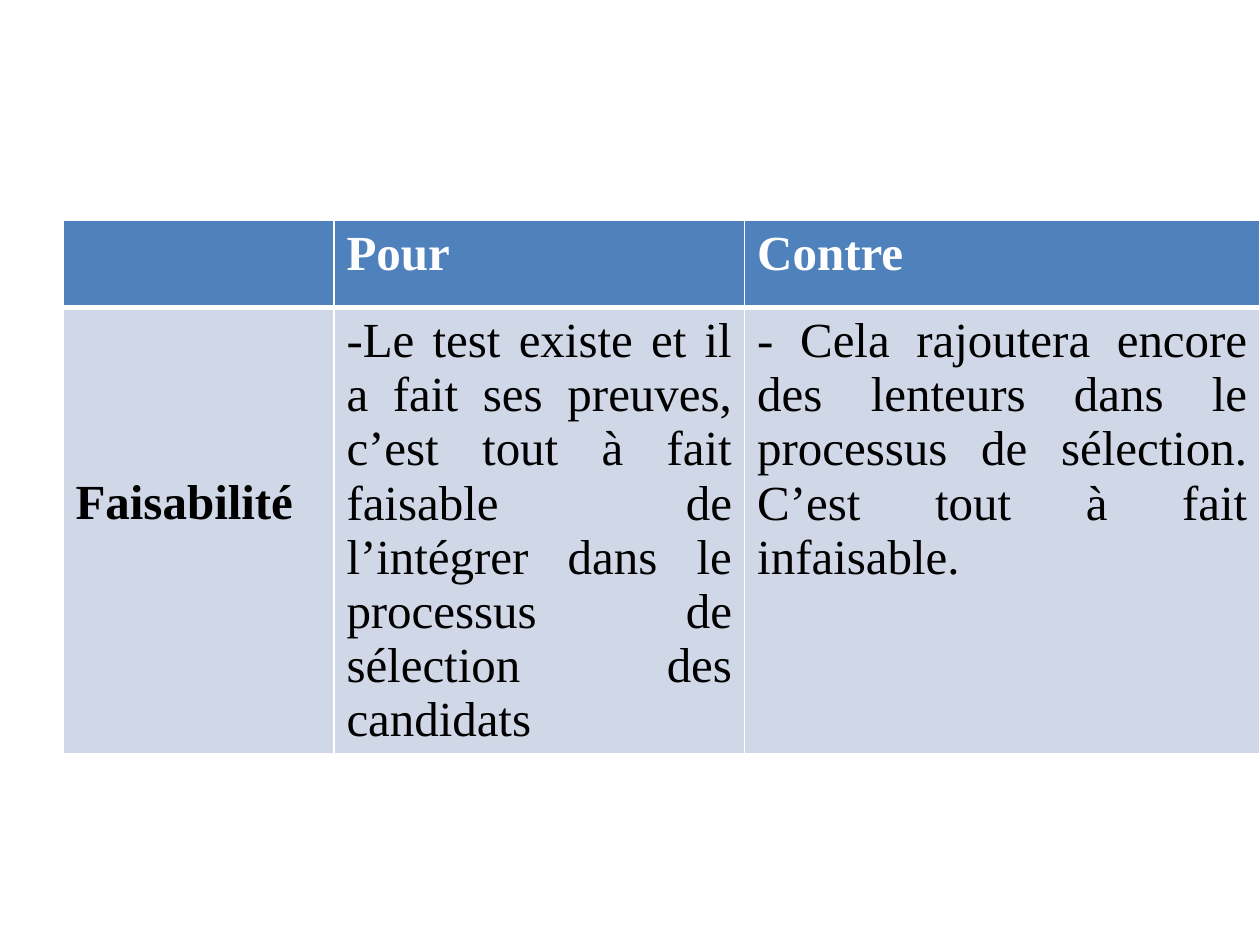
from lxml.etree import SubElement
from pptx import Presentation
from pptx.dml.color import RGBColor
from pptx.enum.text import PP_ALIGN
from pptx.oxml.ns import qn
from pptx.util import Inches, Pt

HEADER_FILL, BODY_FILL = "4F81BD", "D0D8E8"
WHITE, BLACK = "FFFFFF", "000000"
COLUMN_WIDTHS = (2.15, 3.26, 4.09)
ROW_HEIGHTS = (0.69, 3.53)
ARGUMENTS = (
    ("", "Pour", "Contre"),
    (
        "Faisabilité",
        "-Le test existe et il a fait ses preuves, c’est tout à fait faisable "
        "de l’intégrer dans le processus de sélection des candidats",
        "- Cela rajoutera encore des lenteurs dans le processus de sélection. "
        "C’est tout à fait infaisable.",
    ),
)


def color(value):
    return RGBColor.from_string(value)


def write(frame, text, size=28, font="Times New Roman", fill=BLACK, bold=False):
    paragraph = frame.paragraphs[0]
    paragraph.alignment = PP_ALIGN.JUSTIFY
    if not text:
        return
    run = paragraph.add_run()
    run.text = text
    run.font.size = Pt(size)
    run.font.name = font
    run.font.bold = bold
    run.font.color.rgb = color(fill)


def set_borders(cell, **widths):
    """Draw white borders; must run before the cell's fill is set."""
    properties = cell._tc.get_or_add_tcPr()
    for side in "LRTB":
        line = SubElement(properties, qn(f"a:ln{side}"), w=str(Pt(widths.get(side, 1))))
        solid = SubElement(line, qn("a:solidFill"))
        SubElement(solid, qn("a:srgbClr"), val=WHITE)


def add_arguments_table(slide, left, top, width, height):
    table = slide.shapes.add_table(
        len(ARGUMENTS), len(COLUMN_WIDTHS),
        Inches(left), Inches(top), Inches(width), Inches(height),
    ).table
    for column, column_width in zip(table.columns, COLUMN_WIDTHS):
        column.width = Inches(column_width)
    for row, row_height in zip(table.rows, ROW_HEIGHTS):
        row.height = Inches(row_height)

    for r, texts in enumerate(ARGUMENTS):
        header = r == 0
        for c, text in enumerate(texts):
            cell = table.cell(r, c)
            set_borders(cell, **({"B": 3} if header else {"T": 3}))
            cell.fill.solid()
            cell.fill.fore_color.rgb = color(HEADER_FILL if header else BODY_FILL)
            write(cell.text_frame, text, fill=WHITE if header else BLACK,
                  bold=header or c == 0)
    # The criterion sits three text lines below the top of its row.
    table.cell(1, 0).margin_top = Inches(1.34)


def main():
    presentation = Presentation()
    presentation.slide_width = Inches(10)
    presentation.slide_height = Inches(7.5)
    slide = presentation.slides.add_slide(presentation.slide_layouts[6])
    add_arguments_table(slide, 0.5, 1.75, sum(COLUMN_WIDTHS), sum(ROW_HEIGHTS))
    presentation.save("out.pptx")


if __name__ == "__main__":
    main()
